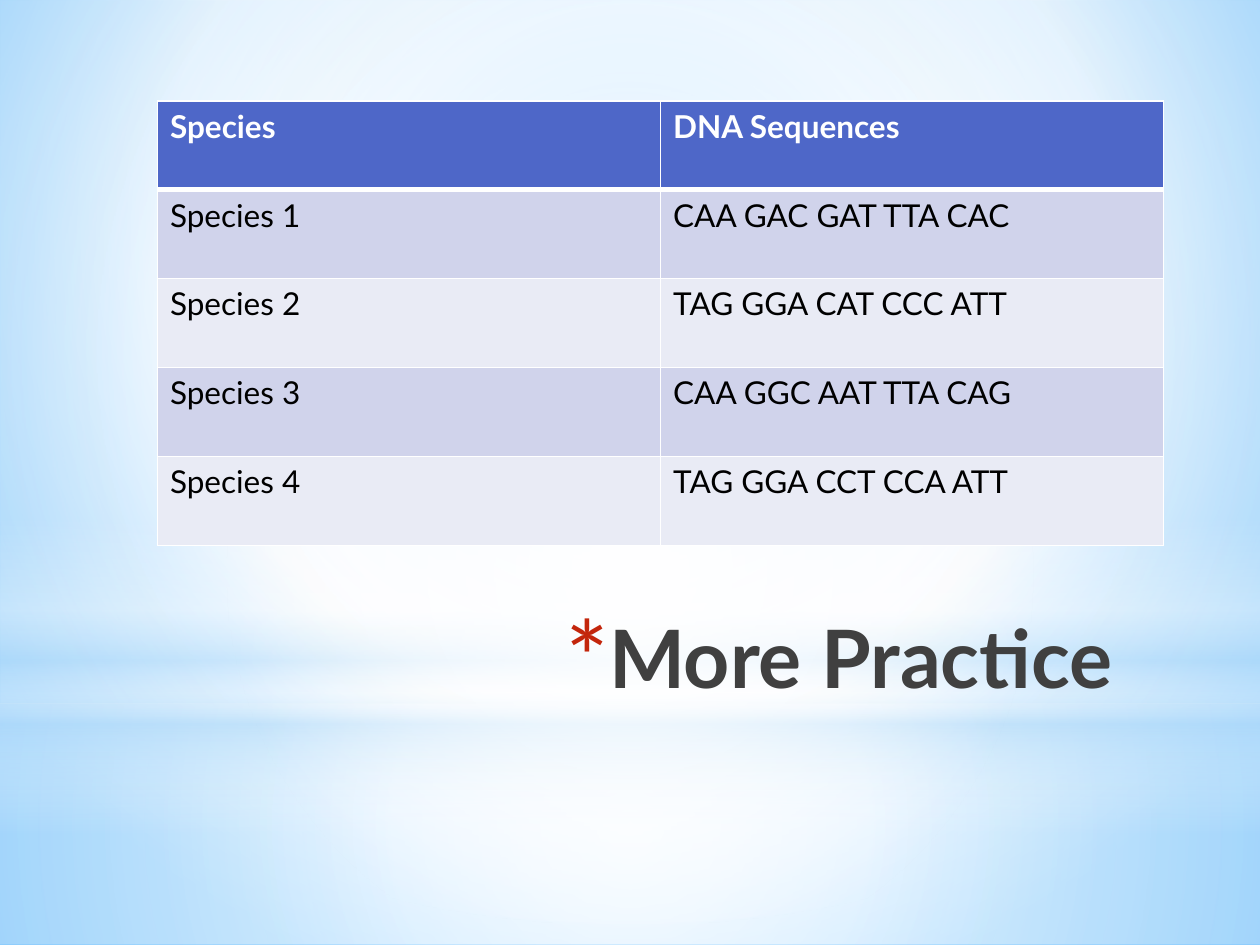
from pptx import Presentation
from pptx.dml.color import RGBColor
from pptx.enum.shapes import MSO_SHAPE
from pptx.enum.text import MSO_ANCHOR, PP_ALIGN
from pptx.oxml import parse_xml
from pptx.oxml.ns import nsdecls, qn
from pptx.util import Pt

WHITE = RGBColor(0xFF, 0xFF, 0xFF)
BLACK = RGBColor(0x00, 0x00, 0x00)
CHARCOAL = RGBColor(0x40, 0x40, 0x40)
RED = RGBColor(0xC3, 0x26, 0x0C)
INDIGO = RGBColor(0x4E, 0x67, 0xC8)
LAVENDER = RGBColor(0xD0, 0xD3, 0xEB)
PALE_LAVENDER = RGBColor(0xE9, 0xEB, 0xF5)
MIST = RGBColor(0xB4, 0xDC, 0xFA)
SKY = RGBColor(0x9E, 0xD5, 0xFF)
BLUE = RGBColor(0x5B, 0xB9, 0xFF)

SLIDE_WIDTH, SLIDE_HEIGHT = 720, 540
HORIZON = 402

ROWS = [
    ("Species", "DNA Sequences"),
    ("Species 1", "CAA GAC GAT TTA CAC"),
    ("Species 2", "TAG GGA CAT CCC ATT"),
    ("Species 3", "CAA GGC AAT TTA CAG"),
    ("Species 4", "TAG GGA CCT CCA ATT"),
]


def radial(left=50, top=50, right=50, bottom=50):
    """Direction of a circular gradient around a focus, in percent insets."""
    return (f'<a:path path="circle"><a:fillToRect l="{left * 1000}" t="{top * 1000}" '
            f'r="{right * 1000}" b="{bottom * 1000}"/></a:path>')


VERTICAL = '<a:lin ang="5400000" scaled="0"/>'


def set_gradient(owner, fill, stops, direction):
    """Fill with stops of (position %, colour, opacity %)."""
    fill.gradient()
    stop_xml = "".join(
        f'<a:gs pos="{position * 1000}"><a:srgbClr val="{color}">'
        f'<a:alpha val="{opacity * 1000}"/></a:srgbClr></a:gs>'
        for position, color, opacity in stops)
    gradient = parse_xml(f'<a:gradFill {nsdecls("a")} rotWithShape="1">'
                         f'<a:gsLst>{stop_xml}</a:gsLst>{direction}</a:gradFill>')
    default = owner.element.find(".//" + qn("a:gradFill"))
    default.getparent().replace(default, gradient)


class SlideBuilder:
    font_name = "Lato"

    def __init__(self, presentation):
        self.slide = presentation.slides.add_slide(presentation.slide_layouts[5])

    def background(self, stops, direction):
        set_gradient(self.slide, self.slide.background.fill, stops, direction)

    def glow(self, kind, top, height, stops, direction):
        """Add a full-width translucent gradient shape."""
        shape = self.slide.shapes.add_shape(
            kind, Pt(0), Pt(top), Pt(SLIDE_WIDTH), Pt(height))
        shape.shadow.inherit = False
        shape.line.fill.background()
        set_gradient(shape, shape.fill, stops, direction)

    def style(self, paragraph, size, color, bold):
        font = paragraph.font
        font.name, font.size, font.bold = self.font_name, Pt(size), bold
        font.color.rgb = color

    def title(self, text, left, top, width, height):
        title = self.slide.shapes.title
        title.left, title.top, title.width, title.height = map(
            Pt, (left, top, width, height))
        title.element.getparent().append(title.element)  # bring to front
        frame = title.text_frame
        frame.text = text
        frame.word_wrap = True
        frame.vertical_anchor = MSO_ANCHOR.TOP
        paragraph = frame.paragraphs[0]
        paragraph.alignment = PP_ALIGN.RIGHT
        self.style(paragraph, 46, CHARCOAL, True)
        self.bullet(paragraph, "*", RED, 128, 25)

    def bullet(self, paragraph, character, color, percent, indent):
        properties = paragraph._p.get_or_add_pPr()
        properties.set("marL", str(Pt(indent)))
        properties.set("indent", str(-Pt(indent)))
        parts = (f'<a:buClr {nsdecls("a")}><a:srgbClr val="{color}"/></a:buClr>',
                 f'<a:buSzPct {nsdecls("a")} val="{percent * 1000}"/>',
                 f'<a:buFont {nsdecls("a")} typeface="{self.font_name}"/>',
                 f'<a:buChar {nsdecls("a")} char="{character}"/>')
        for position, xml in enumerate(parts):
            properties.insert(position, parse_xml(xml))

    def borders(self, cell, **widths):
        properties = cell._tc.get_or_add_tcPr()
        for side in "LRTB":
            width = Pt(widths.get(side, 1))
            properties.append(parse_xml(
                f'<a:ln{side} {nsdecls("a")} w="{width}"><a:solidFill>'
                f'<a:srgbClr val="{WHITE}"/></a:solidFill></a:ln{side}>'))

    def table(self, rows, left, top, width, height):
        table = self.slide.shapes.add_table(
            len(rows), len(rows[0]), Pt(left), Pt(top), Pt(width), Pt(height)).table
        for row_index, texts in enumerate(rows):
            header = row_index == 0
            fill = INDIGO if header else LAVENDER if row_index % 2 else PALE_LAVENDER
            for column_index, text in enumerate(texts):
                cell = table.cell(row_index, column_index)
                cell.text = text
                self.borders(cell, B=3 if header else 1, T=3 if row_index == 1 else 1)
                cell.fill.solid()
                cell.fill.fore_color.rgb = fill
                self.style(cell.text_frame.paragraphs[0], 18,
                           WHITE if header else BLACK, header)


def main():
    presentation = Presentation()
    presentation.slide_width, presentation.slide_height = Pt(SLIDE_WIDTH), Pt(SLIDE_HEIGHT)
    builder = SlideBuilder(presentation)

    builder.background([(0, SKY, 100), (60, WHITE, 100), (100, BLUE, 100)],
                       radial(20, 10, 20, 60))
    builder.glow(MSO_SHAPE.RECTANGLE, HORIZON, SLIDE_HEIGHT - HORIZON,
                 [(0, WHITE, 91), (37, WHITE, 76), (100, MIST, 79)], radial())
    builder.glow(MSO_SHAPE.RECTANGLE, 0, HORIZON,
                 [(0, WHITE, 89), (48, WHITE, 62), (100, MIST, 79)], radial())
    builder.glow(MSO_SHAPE.RECTANGLE, 296.5, 180,
                 [(0, WHITE, 0), (29, WHITE, 30), (45, MIST, 40),
                  (55, WHITE, 26), (65, MIST, 60), (100, WHITE, 0)], VERTICAL)
    builder.glow(MSO_SHAPE.OVAL, 126, HORIZON,
                 [(0, WHITE, 100), (56, WHITE, 0)], radial())

    builder.title("More Practice ", 141, 344, 513, 90)
    builder.table(ROWS, 90, 57.6, 575, 254)
    presentation.save("out.pptx")


if __name__ == "__main__":
    main()
